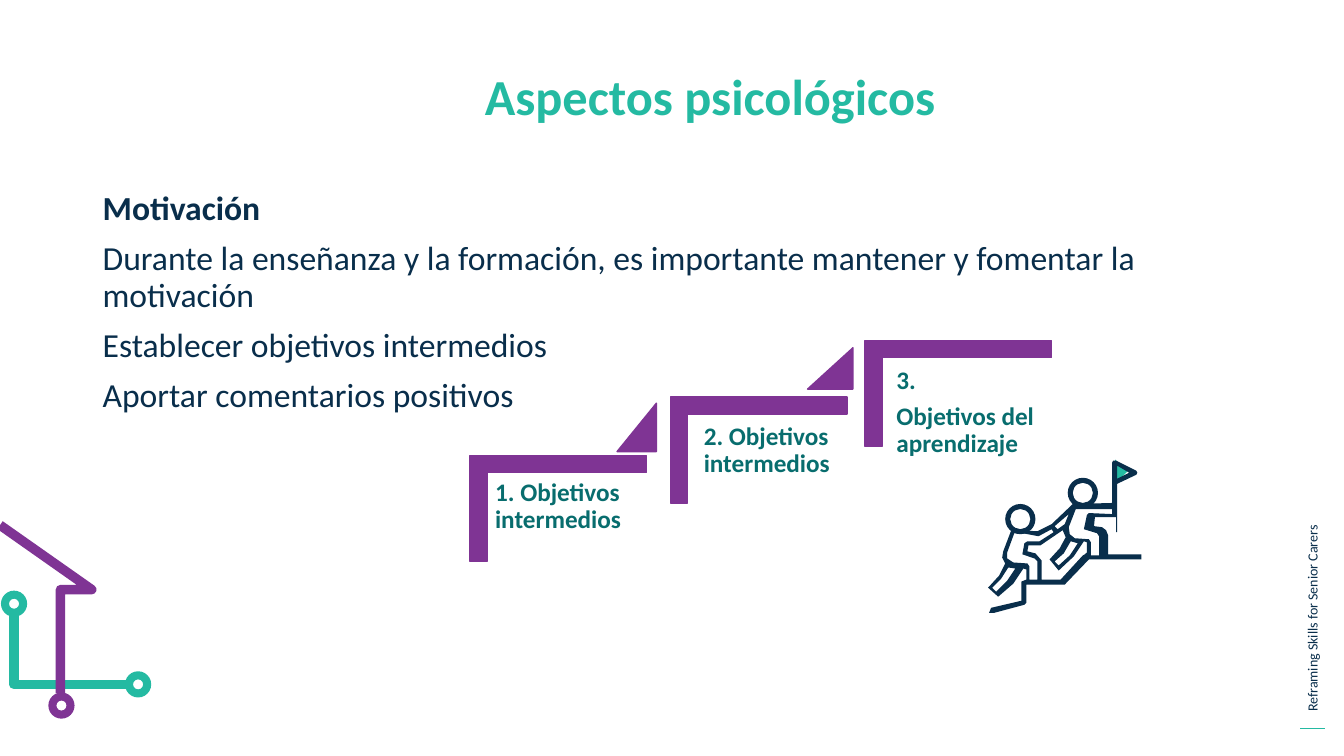
import pptx
import pptx.dml.color
import pptx.enum.shapes
import pptx.enum.text
import pptx.oxml
import pptx.oxml.ns
import pptx.util

Inches = pptx.util.Inches
Pt = pptx.util.Pt
SHAPE = pptx.enum.shapes.MSO_SHAPE
ALIGN = pptx.enum.text.PP_ALIGN

TEAL, PURPLE, NAVY, DARK_TEAL = "24BAA2", "7F3494", "092E4B", "086D6E"
BAR = 1.05  # height of each stair step

# Step of the stairs: left, top, length, label left, label top, label lines
STEPS = [
    (4.66, 4.52, 1.75, 4.84, 4.69, ["1. Objetivos intermedios"]),
    (6.65, 3.94, 1.75, 6.91, 4.13, ["2. Objetivos intermedios"]),
    (8.58, 3.38, 1.85, 8.82, 3.58, ["3.", "Objetivos del aprendizaje"]),
]
# Triangles between steps: left, top, width, height
RISES = [(6.12, 4, 0.39, 0.48), (8.01, 3.45, 0.45, 0.41)]

# Climbers: body contour first, then the openings inside it
CLIMBERS = [
    [(11.08, 5.28), (11.08, 4.8), (11.27, 4.71), (11.28, 4.69), (11.27, 4.67),
     (11.07, 4.57), (11.04, 4.57), (11.03, 4.59), (11.03, 4.99), (10.64, 5),
     (10.43, 5.2), (10.29, 5.27), (10.03, 5.26), (9.95, 5.47), (9.94, 5.53),
     (9.97, 5.59), (9.91, 5.71), (9.8, 5.83), (9.9, 5.92), (10.05, 5.79),
     (10.15, 5.64), (10.18, 5.65), (10.18, 5.75), (10.13, 5.77), (10.13, 5.96),
     (9.83, 6.03), (9.81, 6.08), (9.86, 6.08), (10.16, 6), (10.18, 5.98),
     (10.18, 5.8), (10.56, 5.8), (10.8, 5.55), (11.32, 5.55), (11.32, 5.5),
     (10.99, 5.5), (10.99, 5.31), (10.97, 5.26), (10.93, 5.23), (10.85, 5.22),
     (10.86, 5.13), (11.07, 5.13), (11.07, 5.28)],
    [(11.08, 4.75), (11.08, 4.62), (11.2, 4.69)],
    [(10.6, 5.1), (10.56, 5.2), (10.49, 5.25), (10.46, 5.22)],
    [(10.62, 5.37), (10.69, 5.39), (10.61, 5.51), (10.5, 5.61), (10.46, 5.57),
     (10.55, 5.49)],
    [(9.99, 5.76), (9.88, 5.87), (9.84, 5.83), (9.93, 5.74), (10, 5.63),
     (10.07, 5.64)],
    [(10.21, 5.75), (10.21, 5.62), (10.19, 5.59), (10.05, 5.58), (9.99, 5.54),
     (9.99, 5.48), (10.06, 5.29), (10.14, 5.29), (10.3, 5.32), (10.43, 5.25),
     (10.45, 5.28), (10.31, 5.37), (10.19, 5.37), (10.16, 5.39), (10.14, 5.5),
     (10.26, 5.54), (10.29, 5.57), (10.29, 5.75)],
    [(10.76, 5.5), (10.74, 5.51), (10.52, 5.75), (10.33, 5.75), (10.33, 5.56),
     (10.27, 5.49), (10.19, 5.47), (10.2, 5.41), (10.32, 5.41), (10.54, 5.26),
     (10.57, 5.33), (10.51, 5.44), (10.41, 5.55), (10.5, 5.66), (10.65, 5.52),
     (10.75, 5.37), (10.78, 5.38), (10.78, 5.48)],
    [(10.8, 5.09), (10.78, 5.11), (10.75, 5.25), (10.88, 5.29), (10.9, 5.32),
     (10.9, 5.51), (10.82, 5.51), (10.82, 5.38), (10.8, 5.35), (10.66, 5.34),
     (10.61, 5.3), (10.6, 5.23), (10.67, 5.05), (11.03, 5.05), (11.03, 5.1)],
]


def rgb(colour):
    return pptx.dml.color.RGBColor.from_string(colour)


def write(shape, lines, size, colour, bold=False, bold_first=False, align=ALIGN.LEFT,
          spacing=0.9, before=0, inset=None):
    frame = shape.text_frame
    frame.word_wrap = True
    frame.auto_size = pptx.enum.text.MSO_AUTO_SIZE.NONE
    frame.vertical_anchor = pptx.enum.text.MSO_ANCHOR.TOP
    if inset is not None:
        frame.margin_left = frame.margin_right = Inches(inset)
        frame.margin_top = frame.margin_bottom = Inches(inset)
    for index, line in enumerate(lines):
        paragraph = frame.add_paragraph() if index else frame.paragraphs[0]
        paragraph.alignment = align
        paragraph.line_spacing = spacing
        paragraph.space_before = Pt(before if index else 0)
        run = paragraph.add_run()
        run.text = line
        run.font.name = "Calibri"
        run.font.size = Pt(size)
        run.font.bold = bold or (bold_first and index == 0)
        run.font.color.rgb = rgb(colour)


def add_text(slide, box, lines, size, colour, **formats):
    text_box = slide.shapes.add_textbox(*map(Inches, box))
    write(text_box, lines, size, colour, **formats)
    return text_box


def add_solid(slide, kind, box, colour, adjust=(), outline=False):
    solid = slide.shapes.add_shape(kind, *map(Inches, box))
    solid.shadow.inherit = False
    solid.fill.solid()
    solid.fill.fore_color.rgb = rgb(colour)
    if outline:
        solid.line.color.rgb = rgb(colour)
        solid.line.width = Pt(1)
    else:
        solid.line.fill.background()
    for index, value in enumerate(adjust):
        solid.adjustments[index] = value
    return solid


def add_ring(slide, x, y, diameter, thickness, colour):
    box = (x - diameter / 2, y - diameter / 2, diameter, diameter)
    add_solid(slide, SHAPE.DONUT, box, colour, [thickness / diameter])


def build_path(slide, contours, closed):
    builder = None
    for contour in contours:
        points = [(Inches(x), Inches(y)) for x, y in contour]
        if builder is None:
            builder = slide.shapes.build_freeform(*points[0], scale=1.0)
        else:
            builder.move_to(*points[0])
        builder.add_line_segments(points[1:], close=closed)
    path_shape = builder.convert_to_shape()
    path_shape.shadow.inherit = False
    return path_shape


def add_outline(slide, contours, colour):
    outline = build_path(slide, contours, True)
    outline.fill.solid()
    outline.fill.fore_color.rgb = rgb(colour)
    outline.line.fill.background()


def add_track(slide, points, colour):
    track = build_path(slide, [points], False)
    track.fill.background()
    track.line.color.rgb = rgb(colour)
    track.line.width = Pt(6.8)
    track.line._get_or_add_ln().append(pptx.oxml.parse_xml(
        "<a:round %s/>" % pptx.oxml.ns.nsdecls("a")))


def add_rule(slide, start, end, colour):
    rule = slide.shapes.add_connector(pptx.enum.shapes.MSO_CONNECTOR.STRAIGHT,
                                      *map(Inches, start + end))
    rule.line.color.rgb = rgb(colour)
    rule.line.width = Pt(0.75)
    rule._element.spPr.append(pptx.oxml.parse_xml(
        "<a:effectLst %s/>" % pptx.oxml.ns.nsdecls("a")))


def add_step(slide, left, top, length, label_left, label_top, lines):
    # The corner is turned a quarter, so its box is the upright one about the same centre
    box = (left + (length - BAR) / 2, top - (length - BAR) / 2, BAR, length)
    step = add_solid(slide, SHAPE.CORNER, box, PURPLE, [0.161, 0.161], outline=True)
    step.rotation = 90
    add_text(slide, (label_left, label_top, 1.58, 1.39), lines, 18, DARK_TEAL,
             bold=True, before=6.3, inset=0.07)


def main():
    deck = pptx.Presentation()
    deck.slide_width, deck.slide_height = Inches(13.33), Inches(7.5)
    slide = deck.slides.add_slide(deck.slide_layouts[5])

    # Side label and rule
    side_label = add_text(slide, (11.28, 5.29, 3.47, 0.27),
                          ["Reframing Skills for Senior Carers"], 10, NAVY, spacing=1.0)
    side_label.rotation = 270
    add_rule(slide, (13.14, 7.23), (12.89, 7.23), TEAL)

    # House and circuit decoration
    add_track(slide, [(0.14, 6.11), (0.14, 6.79), (1.25, 6.79)], TEAL)
    add_track(slide, [(0, 5.21), (0.91, 5.85), (0.6, 5.85), (0.6, 6.88)], PURPLE)
    for x, y, colour in [(0.14, 5.99, TEAL), (1.37, 6.79, TEAL), (0.61, 7, PURPLE)]:
        add_ring(slide, x, y, 0.26, 0.08, colour)

    # Title and body
    title = slide.shapes.title
    title.left, title.top, title.width, title.height = map(Inches, (1.64, 0.66, 10.81, 1.11))
    write(title, ["Aspectos psicológicos"], 36, TEAL, bold=True, align=ALIGN.CENTER)
    add_text(slide, (0.92, 1.85, 11.5, 4.76), [
        "Motivación",
        "Durante la enseñanza y la formación, es importante mantener y fomentar la motivación",
        "Establecer objetivos intermedios",
        "Aportar comentarios positivos",
    ], 24, NAVY, bold_first=True, before=10)

    # Stairs of goals
    for step in STEPS:
        add_step(slide, *step)
    for rise in RISES:
        add_solid(slide, SHAPE.ISOSCELES_TRIANGLE, rise, PURPLE, [1], outline=True)

    # Climbers with flag
    add_outline(slide, [[(11.06, 4.56), (11.18, 4.68), (11.06, 4.8)]], TEAL)
    add_outline(slide, CLIMBERS, NAVY)
    for x, y in [(10.74, 4.89), (10.12, 5.15)]:
        add_ring(slide, x, y, 0.3, 0.05, NAVY)

    deck.save("out.pptx")


if __name__ == "__main__":
    main()
